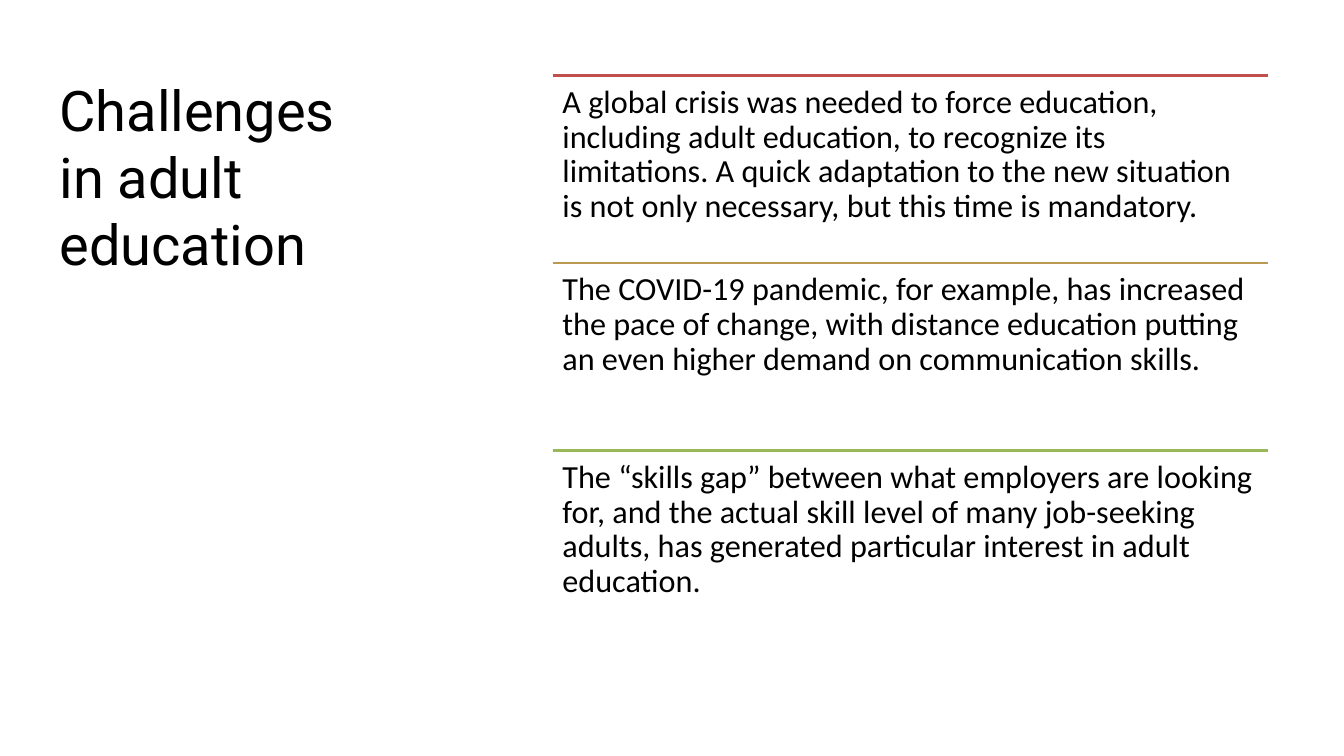
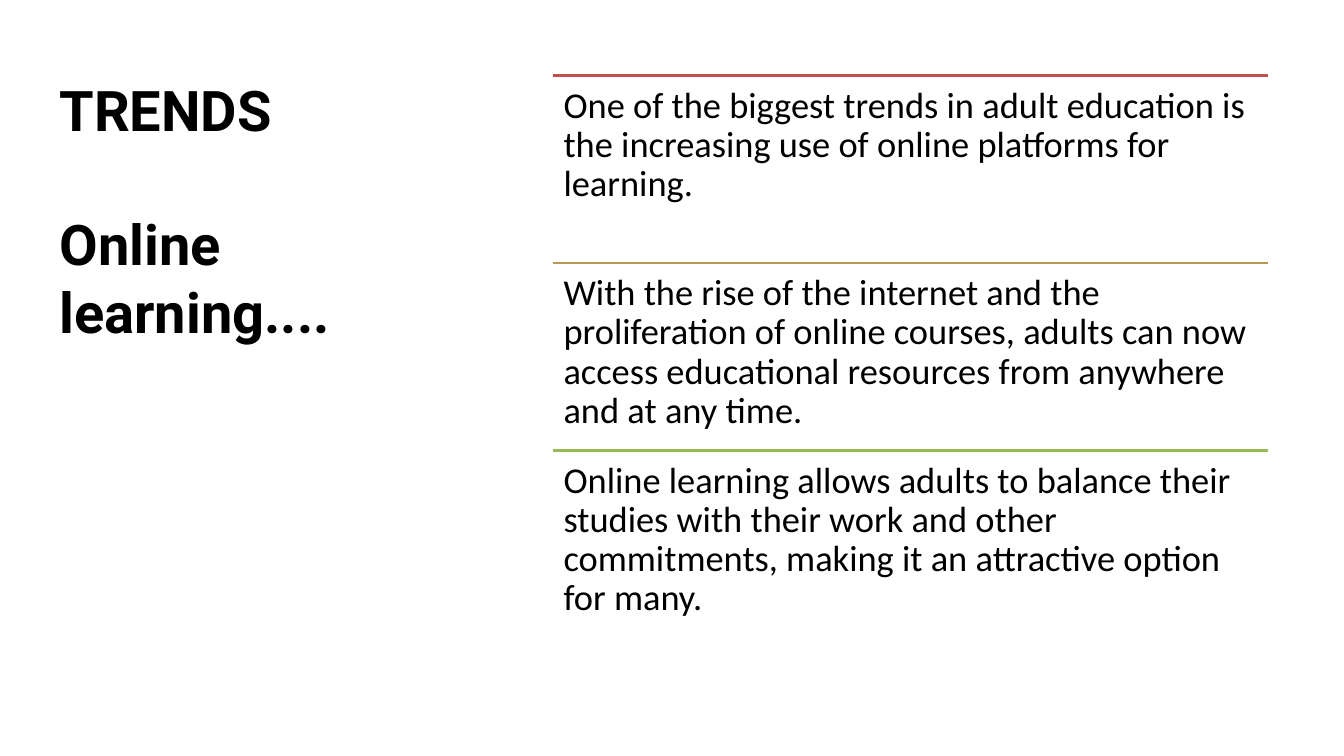
from pptx import Presentation
from pptx.dml.color import RGBColor
from pptx.enum.shapes import MSO_CONNECTOR
from pptx.enum.text import MSO_ANCHOR
from pptx.oxml.ns import qn
from pptx.util import Inches, Pt
from lxml import etree

COLORS = {"text": "000000", "red": "BF504D", "gold": "BB9952", "green": "99B958"}
RULES = ["red", "gold", "green"]
TOP, LEFT, WIDTH, ROW = 0.75, 5.48, 7.1, 1.86

SLIDES = [
    {
        "title": ["Challenges in adult education"],
        "bold": False,
        "size": 23,
        "inset": 0.1,
        "points": [
            "A global crisis was needed to force education, including adult education, "
            "to recognize its limitations. A quick adaptation to the new situation is "
            "not only necessary, but this time is mandatory.",
            "The COVID-19 pandemic, for example, has increased the pace of change, with "
            "distance education putting an even higher demand on communication skills.",
            "The “skills gap” between what employers are looking for, and the actual "
            "skill level of many job-seeking adults, has generated particular interest "
            "in adult education.",
        ],
    },
    {
        "title": ["TRENDS", "Online learning...."],
        "bold": True,
        "size": 26,
        "inset": 0.11,
        "points": [
            "One of the biggest trends in adult education is the increasing use of "
            "online platforms for learning.",
            "With the rise of the internet and the proliferation of online courses, "
            "adults can now access educational resources from anywhere and at any time.",
            "Online learning allows adults to balance their studies with their work and "
            "other commitments, making it an attractive option for many.",
        ],
    },
]


def add_text(s, box, paragraphs, font, size, inset=0, bold=False, spacing=None, gap=0):
    """Add a top-anchored text box; gap is the space in points between paragraphs."""
    tf = s.shapes.add_textbox(*[Inches(v) for v in box]).text_frame
    tf.word_wrap = True
    tf.vertical_anchor = MSO_ANCHOR.TOP
    tf.margin_left = tf.margin_right = Inches(inset)
    tf.margin_top = tf.margin_bottom = Inches(inset)
    tf.text = "\n".join(paragraphs)
    for i, p in enumerate(tf.paragraphs):
        if spacing:
            p.line_spacing = spacing
        if i:
            p.space_before = Pt(gap)
        for r in p.runs:
            r.font.name = font
            r.font.size = Pt(size)
            r.font.bold = bold
            r.font.color.rgb = RGBColor.from_string(COLORS["text"])


def add_rule(s, y, color):
    line = s.shapes.add_connector(
        MSO_CONNECTOR.STRAIGHT, Inches(LEFT), Inches(y), Inches(LEFT + WIDTH), Inches(y)
    )
    line.line.color.rgb = RGBColor.from_string(COLORS[color])
    line.line.width = Pt(2)
    etree.SubElement(line._element.spPr, qn("a:effectLst"))


prs = Presentation()
prs.slide_width = Inches(13.33)
prs.slide_height = Inches(7.5)

for content in SLIDES:
    s = prs.slides.add_slide(prs.slide_layouts[6])
    add_text(s, (0.59, TOP, 3.04, 3 * ROW), content["title"], "Roboto", 40,
             bold=content["bold"], gap=48)
    for i, (color, point) in enumerate(zip(RULES, content["points"])):
        y = TOP + i * ROW
        add_rule(s, y, color)
        add_text(s, (LEFT, y, WIDTH, ROW), [point], "Calibri", content["size"],
                 inset=content["inset"], spacing=0.9)

prs.save("out.pptx")
